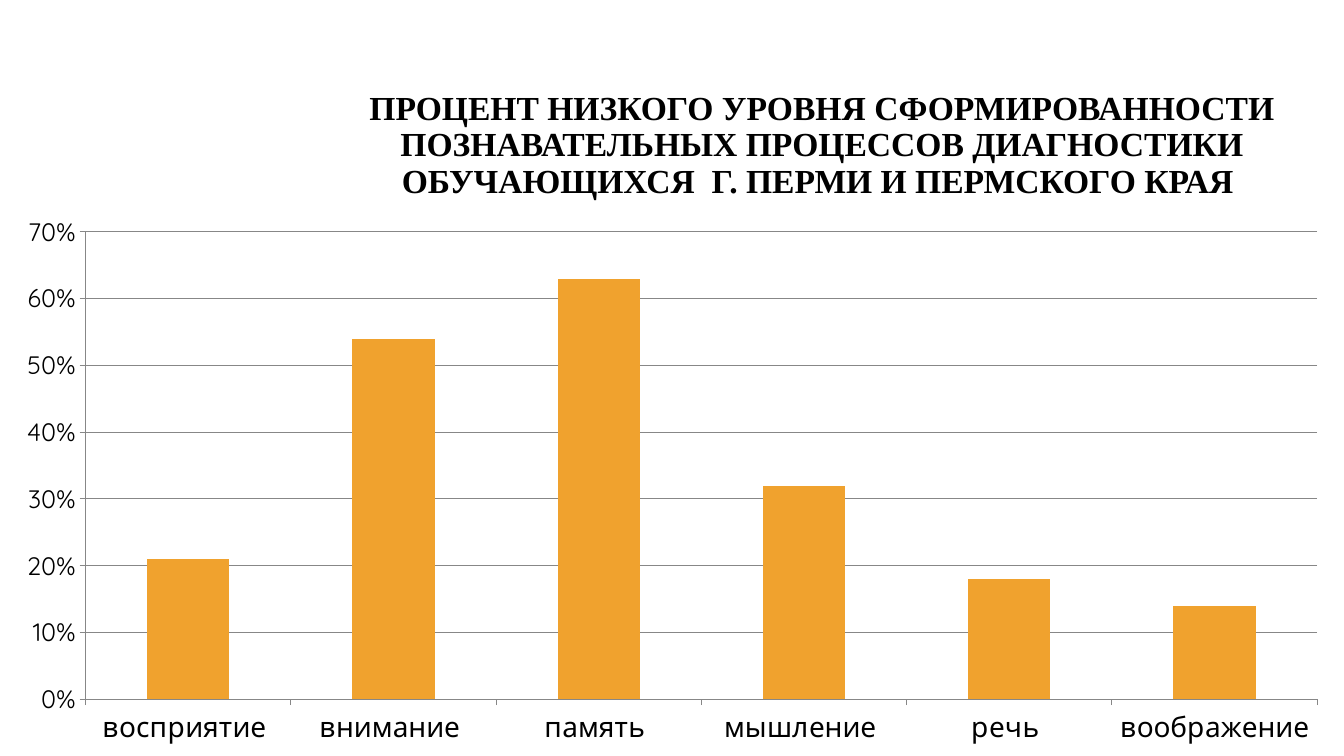
from dataclasses import dataclass

from pptx import Presentation
from pptx.chart.data import CategoryChartData
from pptx.dml.color import RGBColor
from pptx.enum.chart import XL_CHART_TYPE as ChartType, XL_TICK_MARK as TickMark
from pptx.enum.text import MSO_ANCHOR as Anchor, PP_ALIGN as Align
from pptx.util import Pt

EMU_PER_PX = 914400 / 100.8


@dataclass(frozen=True)
class Theme:
    """Colours, fonts and type sizes of the slide."""
    ink: RGBColor = RGBColor(0x00, 0x00, 0x00)
    bar: RGBColor = RGBColor(0xF0, 0xA2, 0x2E)
    rule: RGBColor = RGBColor(0x87, 0x87, 0x87)
    title_font: str = "Times New Roman"
    chart_font: str = "Quicksand"
    title_size: int = 24
    category_size: int = 20
    value_size: int = 18


THEME = Theme()
TITLE = ("ПРОЦЕНТ НИЗКОГО УРОВНЯ СФОРМИРОВАННОСТИ ПОЗНАВАТЕЛЬНЫХ ПРОЦЕССОВ "
         "ДИАГНОСТИКИ ОБУЧАЮЩИХСЯ  Г. ПЕРМИ И ПЕРМСКОГО КРАЯ ")
LOW_LEVEL_SHARES = {
    "восприятие ": 0.21,
    "внимание ": 0.54,
    "память ": 0.63,
    "мышление ": 0.32,
    "речь ": 0.18,
    "воображение ": 0.14,
}


def px(length):
    """Turn a length in px into EMU."""
    return round(length * EMU_PER_PX)


def set_font(font, name, size, color, bold=False):
    """Format a font object."""
    font.name = name
    font.size = Pt(size)
    font.color.rgb = color
    font.bold = bold


def add_text(slide, box, text, *, font, size, color, bold=False,
             align=Align.LEFT, anchor=Anchor.TOP, line_spacing=1.0):
    """Place one formatted paragraph in a wrapping text box."""
    shape = slide.shapes.add_textbox(*map(px, box))
    frame = shape.text_frame
    frame.word_wrap = True
    frame.vertical_anchor = anchor
    paragraph = frame.paragraphs[0]
    paragraph.alignment = align
    paragraph.line_spacing = line_spacing
    run = paragraph.add_run()
    run.text = text
    set_font(run.font, font, size, color, bold)


def add_title(slide, box):
    """Place the centred slide title."""
    add_text(slide, box, TITLE, font=THEME.title_font, size=THEME.title_size,
             color=THEME.ink, bold=True, align=Align.CENTER,
             anchor=Anchor.MIDDLE, line_spacing=0.9)


def style_axis(axis, size):
    """Format the line, ticks and labels of an axis."""
    axis.major_tick_mark = TickMark.OUTSIDE
    axis.minor_tick_mark = TickMark.NONE
    axis.format.line.color.rgb = THEME.rule
    axis.format.line.width = Pt(0.75)
    set_font(axis.tick_labels.font, THEME.chart_font, size, THEME.ink)


def add_share_chart(slide, box):
    """Place the column chart of low-level shares."""
    data = CategoryChartData(number_format="0%")
    data.categories = list(LOW_LEVEL_SHARES)
    data.add_series("Series 1", list(LOW_LEVEL_SHARES.values()))
    chart = slide.shapes.add_chart(
        ChartType.COLUMN_CLUSTERED, *map(px, box), data).chart
    chart.has_title = False
    chart.has_legend = False
    set_font(chart.font, THEME.chart_font, THEME.value_size, THEME.ink)

    plot = chart.plots[0]
    plot.vary_by_categories = False
    plot.gap_width = 150
    fill = plot.series[0].format.fill
    fill.solid()
    fill.fore_color.rgb = THEME.bar

    style_axis(chart.category_axis, THEME.category_size)
    value_axis = chart.value_axis
    style_axis(value_axis, THEME.value_size)
    value_axis.minimum_scale, value_axis.maximum_scale = 0, 0.7
    value_axis.major_unit = 0.1
    value_axis.tick_labels.number_format = "0%"
    value_axis.tick_labels.number_format_is_linked = False
    value_axis.has_major_gridlines = True
    grid_line = value_axis.major_gridlines.format.line
    grid_line.color.rgb = THEME.rule
    grid_line.width = Pt(0.75)


def main():
    """Build and save the presentation."""
    presentation = Presentation()
    presentation.slide_width = px(1344)
    presentation.slide_height = px(756)
    slide = presentation.slides.add_slide(presentation.slide_layouts[6])
    add_title(slide, (278, 61, 1088, 170))
    add_share_chart(slide, (0, 205, 1344, 551))
    presentation.save("out.pptx")


if __name__ == "__main__":
    main()
